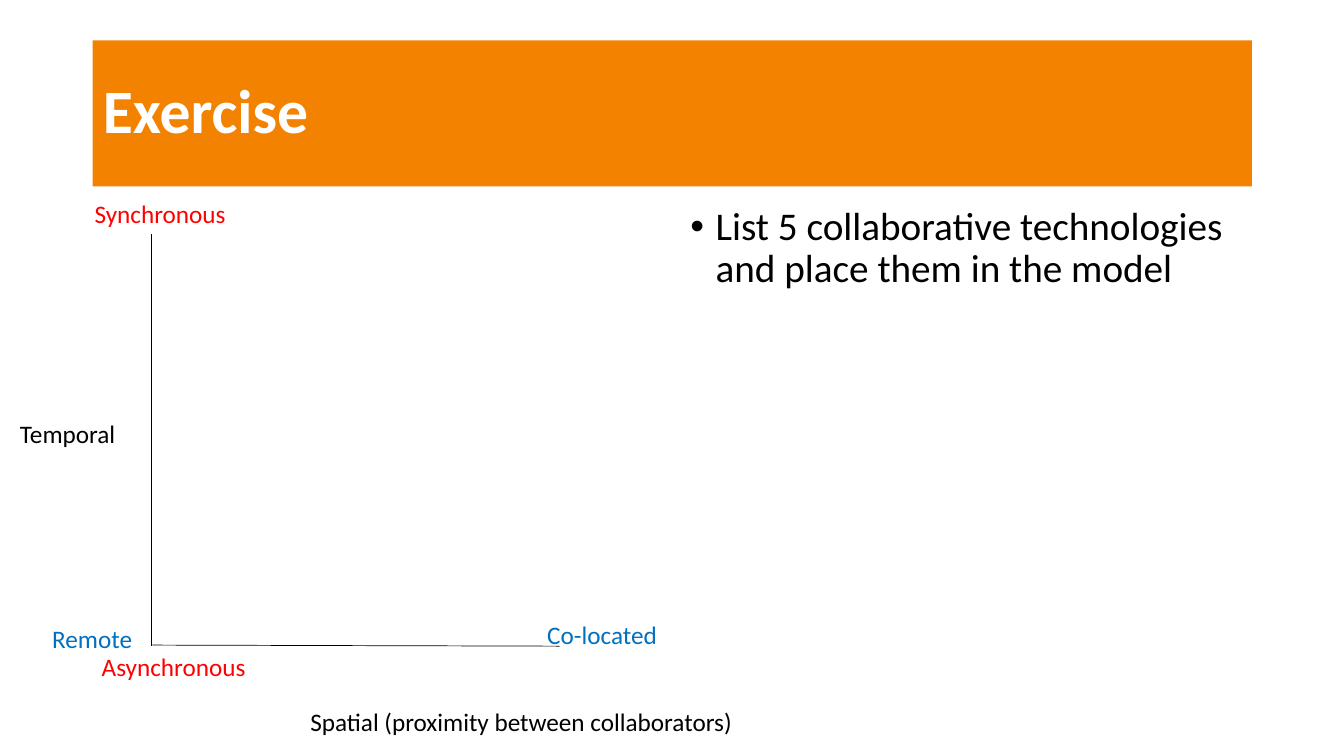
from dataclasses import dataclass

import pptx
import pptx.dml.color
import pptx.enum.shapes
import pptx.enum.text
import pptx.oxml
import pptx.oxml.ns
import pptx.util

# Slide size and a grid of 100 columns by 100 rows
WIDE = pptx.util.Inches(13.33)
HIGH = pptx.util.Inches(7.5)
FONT = "Calibri"
HUES = {
    "band": "F48201",
    "white": "FFFFFF",
    "black": "000000",
    "time": "FF0000",
    "space": "0070C0",
}


@dataclass
class Box:
    left: float
    top: float
    cols: float
    rows: float


@dataclass
class Label:
    text: str
    hue: str
    box: Box


@dataclass
class Axis:
    start: tuple[float, float]
    end: tuple[float, float]


LABELS = [
    Label("Synchronous", "time", Box(6.3, 25.6, 16.73, 5.33)),
    Label("Asynchronous", "time", Box(6.83, 85.47, 16.73, 5.33)),
    Label("Temporal", "black", Box(0.75, 54.67, 8.92, 13.47)),
    Label("Spatial (proximity between collaborators)", "black",
          Box(22.35, 92.8, 34.43, 5.33)),
    Label("Co-located", "space", Box(39.98, 81.2, 10.58, 5.33)),
    Label("Remote", "space", Box(3.15, 81.73, 8.92, 5.33)),
]
AXES = [
    Axis((11.25, 30.93), (11.25, 85.47)),
    Axis((11.33, 85.33), (41.63, 85.47)),
]


def col(num: float) -> int:
    return round(WIDE * num / 100)


def row(num: float) -> int:
    return round(HIGH * num / 100)


def rgb(hue: str) -> pptx.dml.color.RGBColor:
    return pptx.dml.color.RGBColor.from_string(HUES[hue])


def place(shape, box: Box) -> None:
    shape.left, shape.top = col(box.left), row(box.top)
    shape.width, shape.height = col(box.cols), row(box.rows)


def write(shape, text: str, size: int, hue: str, bold: bool = False):
    frame = shape.text_frame
    frame.word_wrap = True
    frame.auto_size = pptx.enum.text.MSO_AUTO_SIZE.NONE
    frame.text = text
    para = frame.paragraphs[0]
    para.alignment = pptx.enum.text.PP_ALIGN.LEFT
    para.space_before = pptx.util.Pt(0)
    font = para.font
    font.name, font.size, font.bold = FONT, pptx.util.Pt(size), bold
    font.color.rgb = rgb(hue)
    return para


def add_label(slide, label: Label) -> None:
    shape = slide.shapes.add_textbox(0, 0, 0, 0)
    place(shape, label.box)
    write(shape, label.text, 18, label.hue)


def add_axis(slide, axis: Axis) -> None:
    line = slide.shapes.add_connector(
        pptx.enum.shapes.MSO_CONNECTOR.STRAIGHT,
        col(axis.start[0]), row(axis.start[1]),
        col(axis.end[0]), row(axis.end[1]))
    line.line.color.rgb = rgb("black")
    line.line.width = pptx.util.Pt(0.5)
    props = line._element.spPr
    props.append(pptx.oxml.parse_xml(
        f"<a:effectLst {pptx.oxml.ns.nsdecls('a')}/>"))


def add_title(slide) -> None:
    title = slide.shapes.title
    place(title, Box(6.9, 5.33, 86.25, 19.33))
    title.fill.solid()
    title.fill.fore_color.rgb = rgb("band")
    para = write(title, "Exercise", 44, "white", bold=True)
    para.line_spacing = 0.9
    title.text_frame.vertical_anchor = pptx.enum.text.MSO_ANCHOR.MIDDLE


def add_task(slide) -> None:
    body = slide.placeholders[1]
    place(body, Box(50.62, 26.67, 42.53, 63.47))
    para = write(
        body, "List 5 collaborative technologies and place them in the model",
        28, "black")
    para.line_spacing = 0.9
    # Hanging indent for the bullet
    props = para._p.get_or_add_pPr()
    hang = pptx.util.Inches(0.25)
    props.set("marL", str(hang))
    props.set("indent", str(-hang))


def main() -> None:
    deck = pptx.Presentation()
    deck.slide_width, deck.slide_height = WIDE, HIGH
    slide = deck.slides.add_slide(deck.slide_layouts[1])

    # Title band and task
    add_title(slide)
    add_task(slide)

    # Time and space model
    for label in LABELS:
        add_label(slide, label)
    for axis in AXES:
        add_axis(slide, axis)

    deck.save("out.pptx")


if __name__ == "__main__":
    main()
